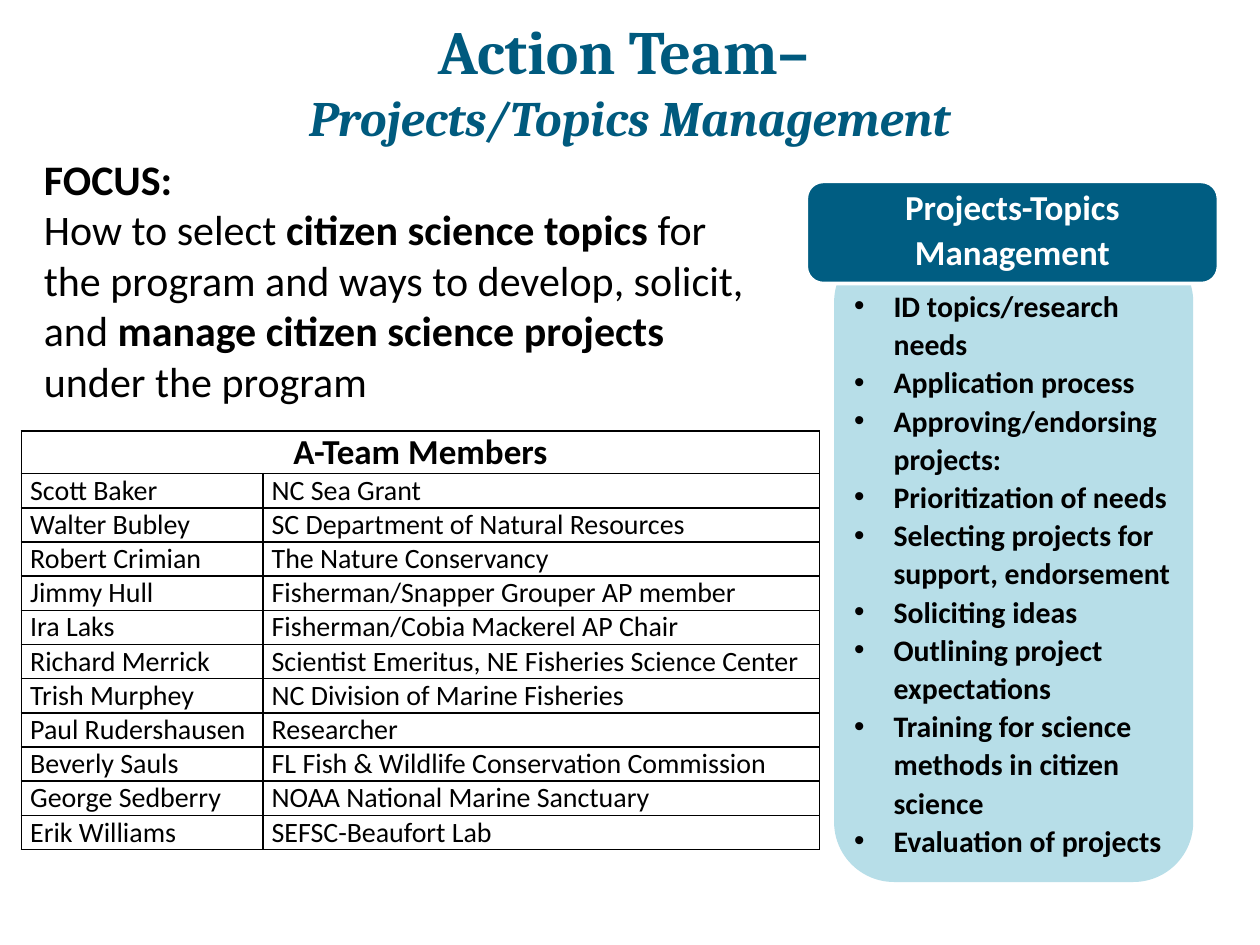
"""Build the Projects/Topics Management action team slide."""
from lxml import etree
from pptx import Presentation
from pptx.dml.color import RGBColor
from pptx.enum.shapes import MSO_SHAPE
from pptx.enum.text import MSO_ANCHOR, PP_ALIGN
from pptx.oxml.ns import qn
from pptx.util import Pt

ROUND = MSO_SHAPE.ROUNDED_RECTANGLE
MIDDLE, BOTTOM = MSO_ANCHOR.MIDDLE, MSO_ANCHOR.BOTTOM
CENTER, LEFT = PP_ALIGN.CENTER, PP_ALIGN.LEFT
HUES = {"black": "000000", "white": "FFFFFF", "title": "005A7E",
        "head": "005D82", "pale": "B7DEE8"}


def hue(name):
    return RGBColor.from_string(HUES[name])


def write(para, text, color="black", **style):
    run = para.add_run()
    run.text = text
    run.font.color.rgb = hue(color)
    for key, value in ({"name": "Calibri"} | style).items():
        setattr(run.font, key, value)


deck = Presentation()
deck.slide_width, deck.slide_height = Pt(720), Pt(540)
slide = deck.slides.add_slide(deck.slide_layouts[6])
shapes = slide.shapes

focus = shapes.add_textbox(Pt(18), Pt(84.24), Pt(426.24), Pt(156.24)).text_frame
focus.word_wrap = True
write(focus.paragraphs[0], "FOCUS:", size=Pt(24), bold=True)
para = focus.add_paragraph()
parts = ["How to select ", "citizen science topics",
         " for the program and ways to develop, solicit, and ",
         "manage citizen science projects", " under the program"]
for i, part in enumerate(parts):
    write(para, part, size=Pt(24), bold=i % 2 == 1)

title = shapes.add_textbox(Pt(0), Pt(-12.24), Pt(720), Pt(115.92)).text_frame
title.word_wrap = True
title.vertical_anchor = MIDDLE
lines = [("Action Team– ", 35.1, False),
         ("Projects/Topics Management", 28.3, True)]
for i, (text, size, slant) in enumerate(lines):
    para = title.add_paragraph() if i else title.paragraphs[0]
    para.alignment = CENTER
    write(para, text, "title", name="Cambria", size=Pt(size), bold=True, italic=slant)

panel = shapes.add_shape(ROUND, Pt(476.64), Pt(138.24), Pt(205.2), Pt(365.76))
head = shapes.add_shape(ROUND, Pt(460.8), Pt(103.68), Pt(235.44), Pt(58.32))
for shape, fill in [(panel, "pale"), (head, "head")]:
    shape.shadow.inherit = False
    shape.fill.solid()
    shape.fill.fore_color.rgb = hue(fill)
    shape.text_frame.word_wrap = True
    shape.text_frame.vertical_anchor = BOTTOM
panel.line.fill.background()
head.line.color.rgb = hue("white")
head.line.width = Pt(2)

para = head.text_frame.paragraphs[0]
para.alignment, para.line_spacing, para.space_after = CENTER, 1.07, Pt(8)
write(para, "Projects-Topics Management", "white", size=Pt(20), bold=True)

tasks = ["ID topics/research needs", "Application process",
         "Approving/endorsing projects:", "Prioritization of needs",
         "Selecting projects for support, endorsement", "Soliciting ideas",
         "Outlining project expectations",
         "Training for science methods in citizen science",
         "Evaluation of projects"]
frame = panel.text_frame
frame.margin_left = frame.margin_right = Pt(1.44)
for i, task in enumerate(tasks):
    para = frame.add_paragraph() if i else frame.paragraphs[0]
    para.alignment, para.line_spacing = LEFT, 1.07
    props = para._p.get_or_add_pPr()
    props.set("marL", str(Pt(22.5)))
    props.set("indent", str(-Pt(22.5)))
    etree.SubElement(props, qn("a:buFont"), typeface="Arial")
    etree.SubElement(props, qn("a:buChar"), char="•")
    write(para, task, size=Pt(17), bold=True)

rows = [("A-Team Members", ""),
        ("Scott Baker", "NC Sea Grant"),
        ("Walter Bubley", "SC Department of Natural Resources"),
        ("Robert Crimian", "The Nature Conservancy"),
        ("Jimmy Hull", "Fisherman/Snapper Grouper AP member"),
        ("Ira Laks", "Fisherman/Cobia Mackerel AP Chair"),
        ("Richard Merrick", "Scientist Emeritus, NE Fisheries Science Center"),
        ("Trish Murphey", "NC Division of Marine Fisheries"),
        ("Paul Rudershausen", "Researcher"),
        ("Beverly Sauls", "FL Fish & Wildlife Conservation Commission"),
        ("George Sedberry", "NOAA National Marine Sanctuary"),
        ("Erik Williams", "SEFSC-Beaufort Lab")]
table = shapes.add_table(len(rows), 2, Pt(12.24), Pt(246.24), Pt(456), Pt(239.4)).table
table.first_row = table.horz_banding = False
table.columns[0].width, table.columns[1].width = Pt(138), Pt(318)
table.cell(0, 0).merge(table.cell(0, 1))
for r, row in enumerate(rows):
    table.rows[r].height = Pt(19.55 if r else 24.4)
    for c, text in enumerate(row):
        cell = table.cell(r, c)
        cell.margin_left = cell.margin_right = Pt(5.04)
        cell.margin_top = cell.margin_bottom = Pt(0)
        props = cell._tc.get_or_add_tcPr()
        for side in "LRTB":
            edge = etree.SubElement(props, qn(f"a:ln{side}"), w=str(Pt(1)))
            solid = etree.SubElement(edge, qn("a:solidFill"))
            etree.SubElement(solid, qn("a:srgbClr"), val=HUES["black"])
        cell.fill.background()
        if text:
            para = cell.text_frame.paragraphs[0]
            para.alignment = LEFT if r else CENTER
            write(para, text, size=Pt(16 if r else 20), bold=r == 0)

deck.save("out.pptx")
